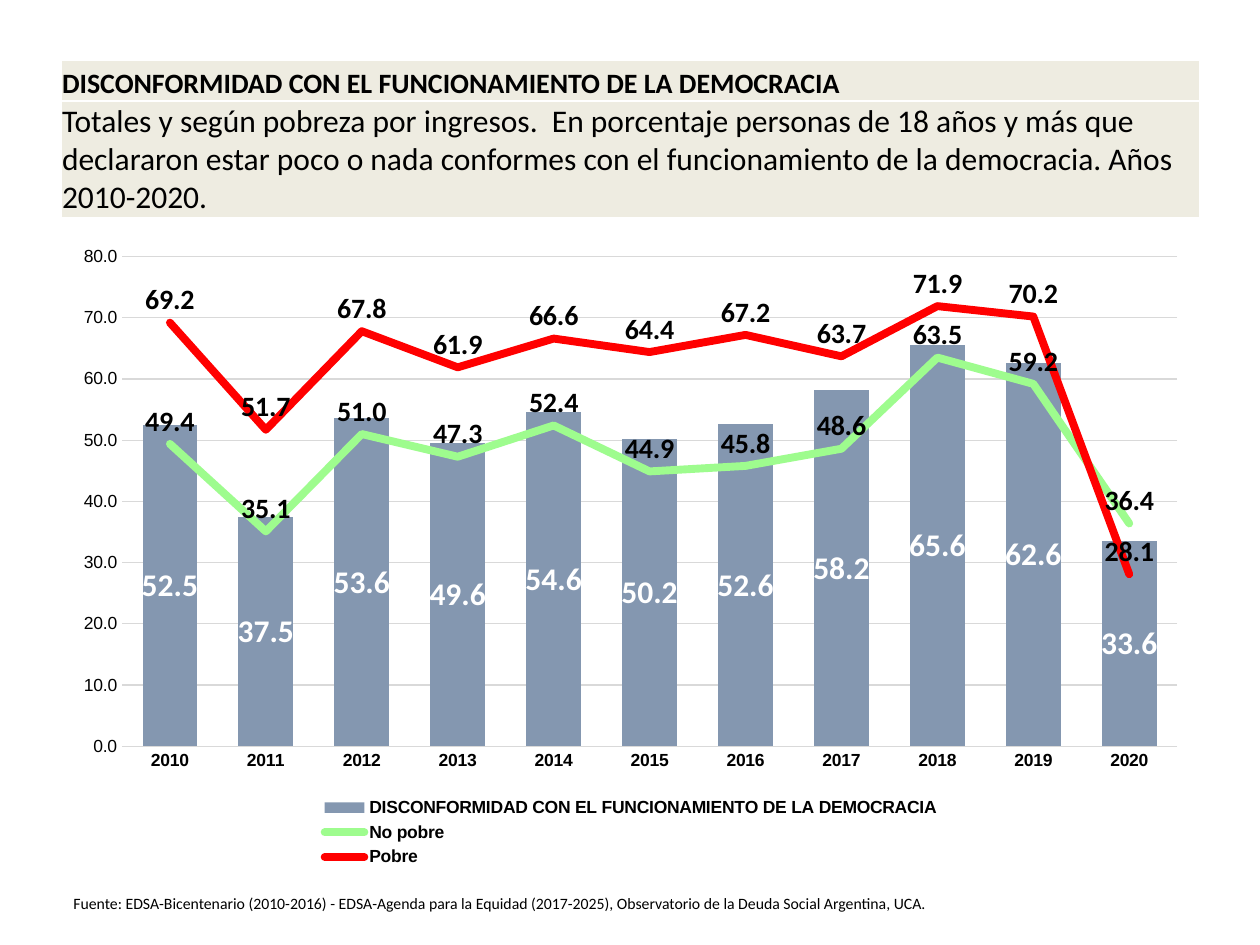
import copy
from dataclasses import dataclass

import pptx
import pptx.chart.data
import pptx.dml.color
import pptx.enum.chart
import pptx.enum.text
import pptx.oxml
import pptx.oxml.ns
import pptx.util

PIXELS_PER_INCH = 126


@dataclass(frozen=True)
class Theme:
    black: str = "000000"
    white: str = "FFFFFF"
    band: str = "EEECE1"
    grid: str = "D9D9D9"
    total: str = "8497B0"
    not_poor: str = "9EFC8E"
    poor: str = "FF0000"
    text_font: str = "Calibri"
    chart_font: str = "Arial"
    heading: int = 16
    subheading: int = 18
    source: int = 9
    axis: int = 10
    bar_label: int = 18
    line_label: int = 16
    series_line: float = 4.5
    thin_line: float = 0.75
    border: int = 1


THEME = Theme()

HEADING = "DISCONFORMIDAD CON EL FUNCIONAMIENTO DE LA DEMOCRACIA"
SUBHEADING = (
    "Totales y según pobreza por ingresos.  En porcentaje personas de 18 años y más "
    "que declararon estar poco o nada conformes con el funcionamiento de la "
    "democracia. Años 2010-2020."
)
SOURCE = (
    "Fuente: EDSA-Bicentenario (2010-2016) - EDSA-Agenda para la Equidad (2017-2025), "
    "Observatorio de la Deuda Social Argentina, UCA."
)
YEARS = [str(year) for year in range(2010, 2021)]
SERIES = {
    HEADING: [52.5, 37.5, 53.6, 49.6, 54.6, 50.2, 52.6, 58.2, 65.6, 62.6, 33.6],
    "No pobre": [49.4, 35.1, 51.0, 47.3, 52.4, 44.9, 45.8, 48.6, 63.5, 59.2, 36.4],
    "Pobre": [69.2, 51.7, 67.8, 61.9, 66.6, 64.4, 67.2, 63.7, 71.9, 70.2, 28.1],
}


def px(*lengths):
    return [pptx.util.Emu(round(length * 914400 / PIXELS_PER_INCH)) for length in lengths]


def rgb(color):
    return pptx.dml.color.RGBColor.from_string(color)


def set_format(target, values):
    for name, value in values.items():
        setattr(target, name, value)


def set_font(font, name, size, bold=False, color=THEME.black):
    set_format(font, {"name": name, "size": pptx.util.Pt(size), "bold": bold})
    font.color.rgb = rgb(color)


def set_line(line, color, width):
    line.color.rgb = rgb(color)
    line.width = pptx.util.Pt(width)


def add_borders(cell):
    properties = cell._tc.get_or_add_tcPr()
    for position, side in enumerate(("lnL", "lnR", "lnT", "lnB")):
        border = pptx.oxml.parse_xml(
            f'<a:{side} {pptx.oxml.ns.nsdecls("a")} w="{pptx.util.Pt(THEME.border)}">'
            f'<a:solidFill><a:srgbClr val="{THEME.white}"/></a:solidFill></a:{side}>'
        )
        properties.insert(position, border)


def fill_cell(cell, text, size, bold):
    left, right, top = px(1, 1, 1)
    set_format(cell, {
        "margin_left": left, "margin_right": right, "margin_top": top, "margin_bottom": 0,
        "vertical_anchor": pptx.enum.text.MSO_ANCHOR.BOTTOM,
    })
    cell.fill.solid()
    cell.fill.fore_color.rgb = rgb(THEME.band)
    add_borders(cell)
    run = cell.text_frame.paragraphs[0].add_run()
    run.text = text
    set_font(run.font, THEME.text_font, size, bold)


def add_heading_table(slide):
    frame = slide.shapes.add_table(2, 1, *px(61, 60, 1139, 156))
    rows = [(41, HEADING, THEME.heading, True), (77, SUBHEADING, THEME.subheading, False)]
    for index, (height, text, size, bold) in enumerate(rows):
        frame.table.rows[index].height = px(height)[0]
        fill_cell(frame.table.cell(index, 0), text, size, bold)
    frame.height = px(156)[0]


def add_source(slide):
    text_frame = slide.shapes.add_textbox(*px(61, 888, 1173, 31)).text_frame
    text_frame.word_wrap = True
    run = text_frame.paragraphs[0].add_run()
    run.text = SOURCE
    set_font(run.font, THEME.text_font, THEME.source)


def move_to_line_plot(chart):
    bar_plot = chart.plots[0]._element
    line_plot = pptx.oxml.parse_xml(
        f'<c:lineChart {pptx.oxml.ns.nsdecls("c")}><c:grouping val="standard"/>'
        '<c:varyColors val="0"/><c:marker val="1"/></c:lineChart>'
    )
    marker = line_plot[-1]
    for series in bar_plot.findall(pptx.oxml.ns.qn("c:ser"))[1:]:
        for inversion in series.findall(pptx.oxml.ns.qn("c:invertIfNegative")):
            series.remove(inversion)
        marker.addprevious(series)
    for axis_id in bar_plot.findall(pptx.oxml.ns.qn("c:axId")):
        line_plot.append(copy.deepcopy(axis_id))
    bar_plot.addnext(line_plot)


def add_labels(series, position, size, color):
    labels = series.data_labels
    set_format(labels, {
        "show_value": True, "position": position,
        "number_format": "0.0", "number_format_is_linked": False,
    })
    set_font(labels.font, THEME.text_font, size, True, color)


def format_line_series(series, color):
    set_line(series.format.line, color, THEME.series_line)
    series.format.line._ln.set("cap", "rnd")
    series.marker.style = pptx.enum.chart.XL_MARKER_STYLE.NONE
    series.smooth = False
    position = pptx.enum.chart.XL_LABEL_POSITION.ABOVE
    add_labels(series, position, THEME.line_label, THEME.black)


def format_axes(chart):
    for axis, bold in ((chart.category_axis, True), (chart.value_axis, False)):
        set_format(axis, {
            "major_tick_mark": pptx.enum.chart.XL_TICK_MARK.NONE,
            "minor_tick_mark": pptx.enum.chart.XL_TICK_MARK.NONE,
        })
        set_font(axis.tick_labels.font, THEME.chart_font, THEME.axis, bold)
    set_line(chart.category_axis.format.line, THEME.grid, THEME.thin_line)
    value_axis = chart.value_axis
    set_format(value_axis, {"minimum_scale": 0, "maximum_scale": 80, "major_unit": 10})
    set_format(value_axis.tick_labels, {
        "number_format": "0.0", "number_format_is_linked": False,
    })
    value_axis.format.line.fill.background()
    set_line(value_axis.major_gridlines.format.line, THEME.grid, THEME.thin_line)


def add_combined_chart(slide):
    data = pptx.chart.data.CategoryChartData(number_format="0.0")
    data.categories = YEARS
    for name, values in SERIES.items():
        data.add_series(name, values)
    chart_type = pptx.enum.chart.XL_CHART_TYPE.COLUMN_CLUSTERED
    chart = slide.shapes.add_chart(chart_type, *px(61, 234, 1139, 638), data).chart
    set_format(chart, {"has_title": False, "has_legend": True})
    set_font(chart.font, THEME.chart_font, THEME.axis, True)
    set_format(chart.legend, {
        "position": pptx.enum.chart.XL_LEGEND_POSITION.BOTTOM, "include_in_layout": False,
    })
    set_font(chart.legend.font, THEME.chart_font, THEME.axis, True)
    format_axes(chart)
    move_to_line_plot(chart)

    bar_plot, line_plot = chart.plots
    set_format(bar_plot, {"gap_width": 75, "overlap": -27, "vary_by_categories": False})
    bars = bar_plot.series[0]
    bars.format.fill.solid()
    bars.format.fill.fore_color.rgb = rgb(THEME.total)
    position = pptx.enum.chart.XL_LABEL_POSITION.CENTER
    add_labels(bars, position, THEME.bar_label, THEME.white)
    for series, color in zip(line_plot.series, (THEME.not_poor, THEME.poor)):
        format_line_series(series, color)


def main():
    presentation = pptx.Presentation()
    width, height = px(1260, 945)
    set_format(presentation, {"slide_width": width, "slide_height": height})
    slide = presentation.slides.add_slide(presentation.slide_layouts[6])
    add_heading_table(slide)
    add_source(slide)
    add_combined_chart(slide)
    presentation.save("out.pptx")


if __name__ == "__main__":
    main()
